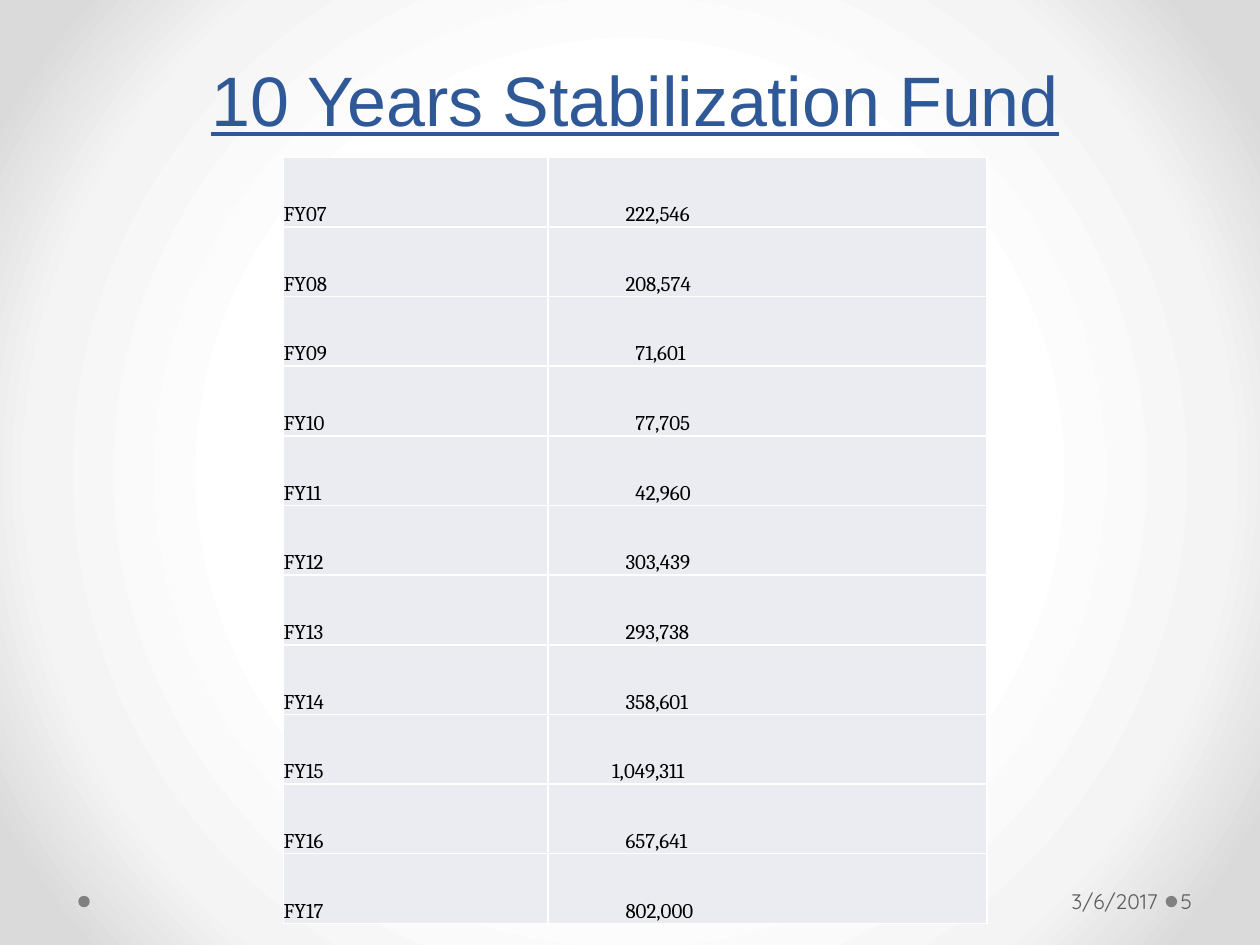
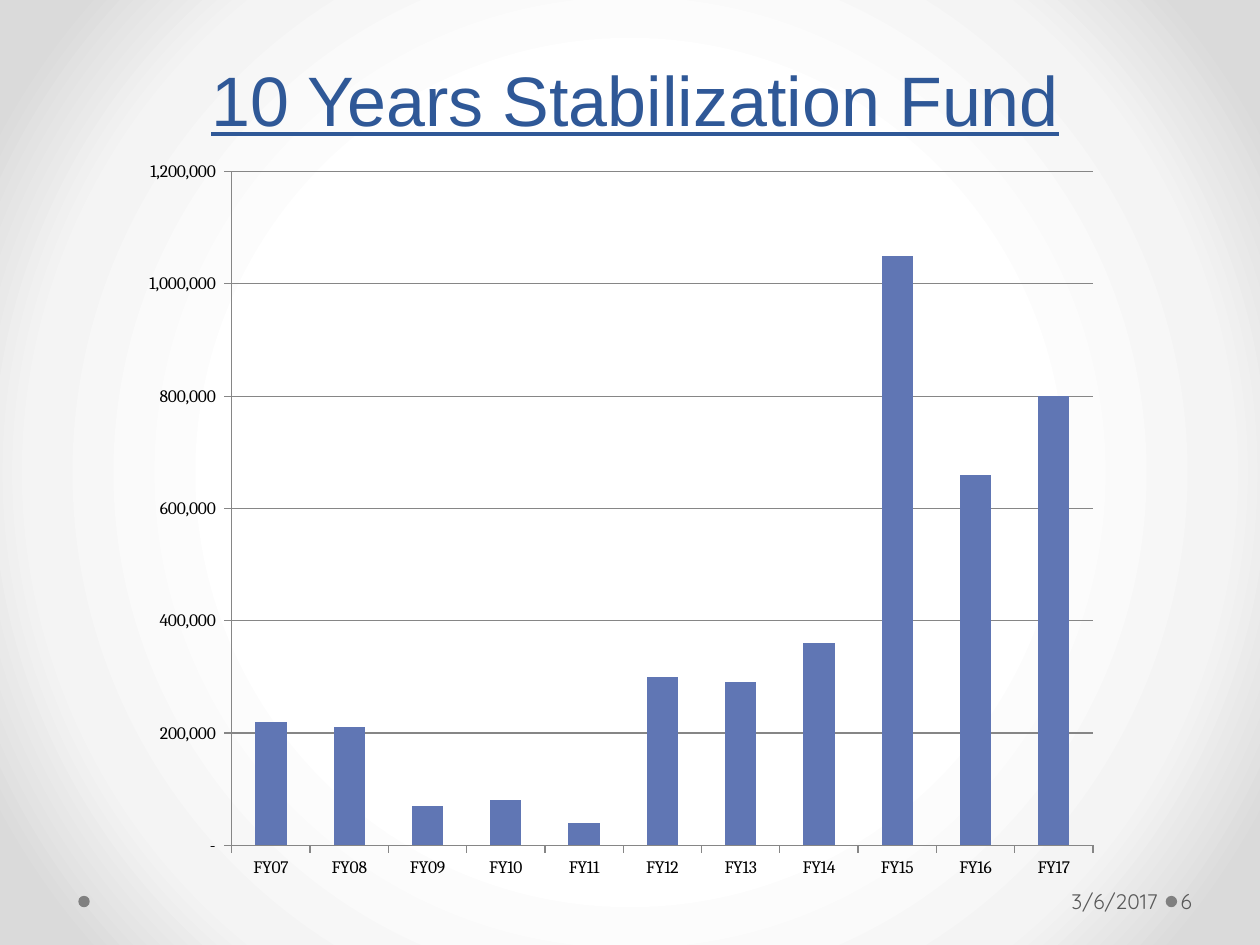
"""Build two slides on ten years of the stabilization fund: a table and a column chart."""
import pptx
import pptx.chart.data
import pptx.dml.color
import pptx.enum.chart
import pptx.enum.shapes
import pptx.enum.text
import pptx.oxml
import pptx.util
from pptx.util import Cm, Pt

COLORS = {
    "title": "2F5897", "footer": "595959", "dot": "808080", "cell": "EAECF2",
    "ink": "000000", "column": "6076B4", "axis": "868686",
    "center": "FFFFFF", "middle": "F4F4F4", "edge": "DADADA",
}
FUND = {
    "FY07": 222546, "FY08": 208574, "FY09": 71601, "FY10": 77705,
    "FY11": 42960, "FY12": 303439, "FY13": 293738, "FY14": 358601,
    "FY15": 1049311, "FY16": 657641, "FY17": 802000,
}
INDENT_BY_LENGTH = {6: 1.76, 7: 1.56, 9: 1.29}
ALIGN = pptx.enum.text.PP_ALIGN
ANCHOR = pptx.enum.text.MSO_ANCHOR


def style(font, name, size, color):
    font.name = name
    font.size = Pt(size)
    font.color.rgb = pptx.dml.color.RGBColor.from_string(COLORS[color])


def add_text(slide, text, box, margins, anchor, align, font):
    frame = slide.shapes.add_textbox(*[Cm(length) for length in box]).text_frame
    frame.word_wrap = True
    frame.vertical_anchor = anchor
    frame.margin_left, frame.margin_top, frame.margin_right, frame.margin_bottom = [
        Cm(margin) for margin in margins]
    frame.text = text
    line = frame.paragraphs[0]
    line.alignment = align
    style(line.runs[0].font, *font)
    return line


deck = pptx.Presentation()
deck.slide_width, deck.slide_height = Cm(25.4), Cm(19.05)

master = deck.slide_master
master.background.fill.solid()
backdrop = master.element.xpath("p:cSld/p:bg/p:bgPr")[0]
stops = "".join(
    f'<a:gs pos="{percent * 1000}"><a:srgbClr val="{COLORS[color]}"/></a:gs>'
    for percent, color in [(50, "center"), (76, "middle"), (92, "edge")])
backdrop.replace(backdrop[0], pptx.oxml.parse_xml(
    '<a:gradFill xmlns:a="http://schemas.openxmlformats.org/drawingml/2006/main" rotWithShape="1">'
    f'<a:gsLst>{stops}</a:gsLst><a:path path="circle">'
    '<a:fillToRect l="50000" t="50000" r="50000" b="50000"/></a:path></a:gradFill>'))

for page in (5, 6):
    slide = deck.slides.add_slide(deck.slide_layouts[6])
    for left in (23.5, 1.58):
        dot = slide.shapes.add_shape(
            pptx.enum.shapes.MSO_SHAPE.OVAL, Cm(left), Cm(18.06), Cm(0.23), Cm(0.23))
        dot.shadow.inherit = False
        dot.fill.solid()
        dot.fill.fore_color.rgb = pptx.dml.color.RGBColor.from_string(COLORS["dot"])
        dot.line.fill.background()
    title = add_text(slide, "10 Years Stabilization Fund", (0, 0, 25.6, 2.96),
                     (0.25, 0.13, 0.25, 0.13), ANCHOR.BOTTOM, ALIGN.CENTER, ("Arial", 40, "title"))
    title.line_spacing = Pt(58)
    title.runs[0].font.underline = True
    add_text(slide, "3/6/2017", (17.68, 17.65, 5.79, 1.02), (0.25, 0.13, 0.13, 0.13),
             ANCHOR.MIDDLE, ALIGN.RIGHT, ("Quicksand", 12, "footer"))
    add_text(slide, str(page), (23.72, 17.65, 1.55, 1.02), (0.08, 0.13, 0.13, 0.13),
             ANCHOR.MIDDLE, ALIGN.LEFT, ("Quicksand", 12, "footer"))

table_slide, chart_slide = deck.slides

balances = table_slide.shapes.add_table(
    len(FUND), 2, Cm(5.72), Cm(3.17), Cm(14.18), Cm(15.45)).table
balances.first_row = False
balances.horz_banding = False
balances.columns[0].width, balances.columns[1].width = Cm(5.33), Cm(8.85)
for row, (year, balance) in enumerate(FUND.items()):
    amount = f"{balance:,}"
    for column, (text, indent) in enumerate(
            [(year, 0), (amount, INDENT_BY_LENGTH[len(amount)])]):
        cell = balances.cell(row, column)
        cell.fill.solid()
        cell.fill.fore_color.rgb = pptx.dml.color.RGBColor.from_string(COLORS["cell"])
        cell.margin_left = Cm(indent)
        cell.margin_top = cell.margin_right = cell.margin_bottom = 0
        cell.vertical_anchor = ANCHOR.BOTTOM
        cell.text_frame.text = text
        style(cell.text_frame.paragraphs[0].runs[0].font, "Cambria", 12, "ink")

fund_data = pptx.chart.data.CategoryChartData()
fund_data.categories = list(FUND)
fund_data.add_series("Series 1", [round(balance, -4) for balance in FUND.values()])
history = chart_slide.shapes.add_chart(
    pptx.enum.chart.XL_CHART_TYPE.COLUMN_CLUSTERED,
    Cm(2.54), Cm(2.96), Cm(19.89), Cm(15.03), fund_data).chart
history.has_title = False
history.has_legend = False
style(history.font, "Cambria", 10, "ink")

plot = history.plots[0]
plot.vary_by_categories = False
plot.gap_width = 150
columns = plot.series[0].format.fill
columns.solid()
columns.fore_color.rgb = pptx.dml.color.RGBColor.from_string(COLORS["column"])

years, amounts = history.category_axis, history.value_axis
amounts.minimum_scale, amounts.maximum_scale, amounts.major_unit = 0, 1200000, 200000
amounts.has_major_gridlines = True
amounts.tick_labels.number_format = '_(* #,##0_);_(* \\(#,##0\\);_(* "-"_);_(@_)'
amounts.tick_labels.number_format_is_linked = False
for axis in (years, amounts):
    axis.major_tick_mark = pptx.enum.chart.XL_TICK_MARK.OUTSIDE
    axis.minor_tick_mark = pptx.enum.chart.XL_TICK_MARK.NONE
for ruled in (years, amounts, amounts.major_gridlines):
    ruled.format.line.width = Pt(0.75)
    ruled.format.line.color.rgb = pptx.dml.color.RGBColor.from_string(COLORS["axis"])

deck.save("out.pptx")
